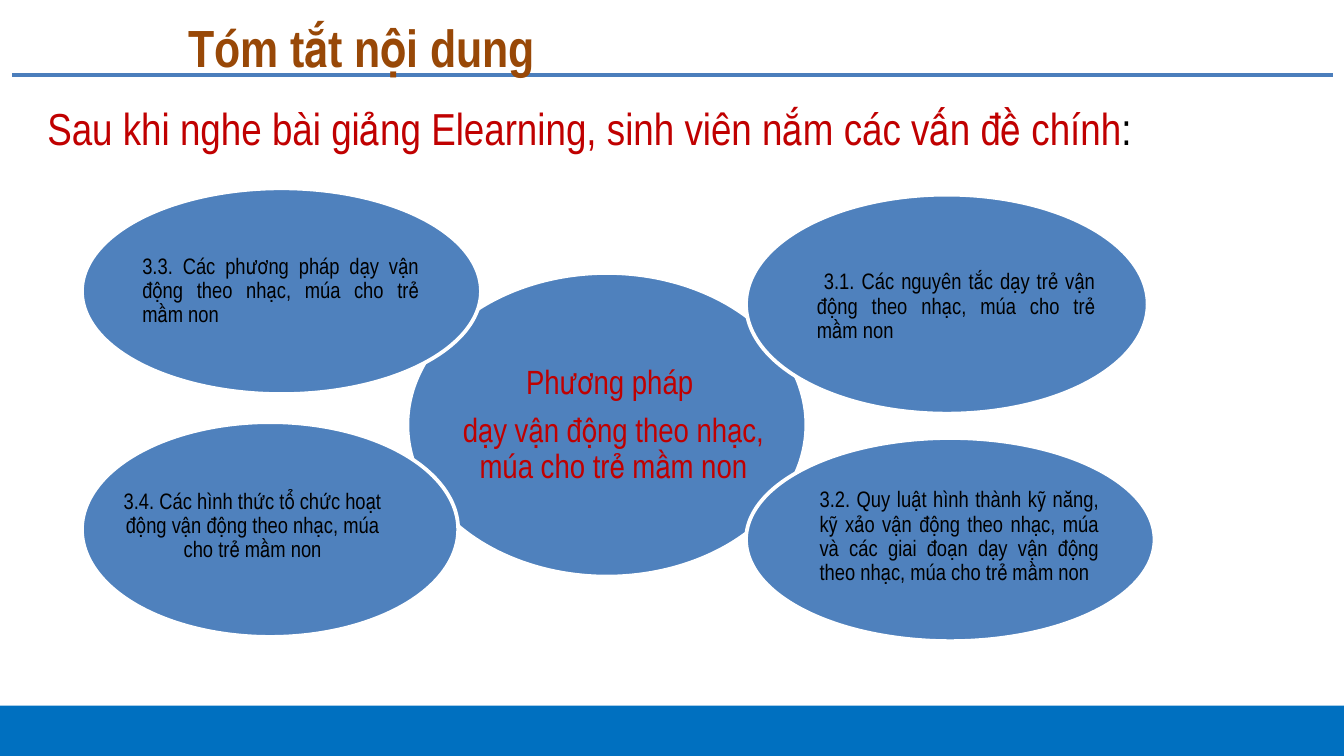
from lxml.etree import SubElement
from pptx import Presentation
from pptx.dml.color import RGBColor
from pptx.enum.shapes import MSO_CONNECTOR, MSO_SHAPE
from pptx.enum.text import MSO_ANCHOR, MSO_AUTO_SIZE, PP_ALIGN
from pptx.oxml.ns import qn
from pptx.util import Cm, Pt

BAR_BLUE = RGBColor(0x00, 0x70, 0xC0)
RULE_BLUE = RGBColor(0x4B, 0x7E, 0xBC)
OVAL_BLUE = RGBColor(0x4F, 0x81, 0xBD)
WHITE = RGBColor(0xFF, 0xFF, 0xFF)
BLACK = RGBColor(0x00, 0x00, 0x00)
RED = RGBColor(0xC0, 0x00, 0x00)
BROWN = RGBColor(0x98, 0x48, 0x07)
FONT = "Arial Narrow"

CENTRE_LINES = ["Phương pháp ", "dạy vận động theo nhạc, múa cho trẻ mầm non"]
TOPICS = [
    ((14.1, 3.68, 7.59, 4.14), (15.39, 4.34, 5.36, 2.92), PP_ALIGN.JUSTIFY,
     " 3.1. Các nguyên tắc dạy trẻ vận động theo nhạc, múa cho trẻ mầm non "),
    ((14.1, 8.28, 7.72, 3.84), (15.44, 8.46, 5.38, 3.38), PP_ALIGN.JUSTIFY,
     "3.2. Quy luật hình thành kỹ năng, kỹ xảo vận động theo nhạc, múa "
     "và các giai đoạn dạy vận động theo nhạc, múa cho trẻ mầm non"),
    ((1.55, 7.98, 7.11, 4.06), (2.26, 8.51, 5.03, 2.87), PP_ALIGN.CENTER,
     "3.4. Các hình thức tổ chức hoạt động vận động theo nhạc, múa cho trẻ mầm non"),
    ((1.55, 3.56, 7.54, 3.89), (2.64, 4.14, 5.33, 2.74), PP_ALIGN.JUSTIFY,
     "3.3. Các phương pháp dạy vận động theo nhạc, múa cho trẻ mầm non "),
]


def add_span(para, text, size, color, bold=False):
    span = para.add_run()
    span.text = text
    span.font.name = FONT
    span.font.size = Pt(size)
    span.font.bold = bold
    span.font.color.rgb = color


def place(shape, bounds):
    shape.left, shape.top, shape.width, shape.height = map(Cm, bounds)


def add_solid(page, kind, bounds, color):
    shape = page.shapes.add_shape(kind, *map(Cm, bounds))
    shape.shadow.inherit = False
    shape.fill.solid()
    shape.fill.fore_color.rgb = color
    shape.line.fill.background()
    return shape


def add_frame(page):
    bar = add_solid(page, MSO_SHAPE.RECTANGLE, (-0.1, 13.34, 25.6, 0.95), BAR_BLUE)
    rule = page.shapes.add_connector(
        MSO_CONNECTOR.STRAIGHT, Cm(0.23), Cm(1.42), Cm(25.2), Cm(1.42))
    rule.line.color.rgb = RULE_BLUE
    rule.line.width = Pt(2)
    SubElement(rule.element.spPr, qn("a:effectLst"))
    for shape in (bar, rule):
        page.shapes.title.element.addprevious(shape.element)


def fill_title(page):
    title = page.shapes.title
    place(title, (-11.3, 0.15, 36.27, 1.45))
    frame = title.text_frame
    frame.auto_size = MSO_AUTO_SIZE.NONE
    frame.vertical_anchor = MSO_ANCHOR.MIDDLE
    para = frame.paragraphs[0]
    para.alignment = PP_ALIGN.CENTER
    add_span(para, "Tóm tắt nội dung", 28, BROWN, True)


def fill_body(page):
    body = page.placeholders[1]
    place(body, (0.64, 1.68, 36.27, 12.62))
    frame = body.text_frame
    frame.auto_size = MSO_AUTO_SIZE.NONE
    para = frame.paragraphs[0]
    para.alignment = PP_ALIGN.JUSTIFY
    para.line_spacing = 1.1
    para.space_before = Pt(6)
    properties = para._p.get_or_add_pPr()
    properties.set("marL", "0")
    properties.set("indent", "0")
    SubElement(properties, qn("a:buNone"))
    add_span(para, "Sau khi nghe bài giảng Elearning, sinh viên nắm các vấn đề chính", 24, RED)
    add_span(para, ":", 24, BLACK)


def add_oval(page, oval_bounds, text_bounds, lines, size, color, align, inset):
    oval = add_solid(page, MSO_SHAPE.OVAL, oval_bounds, OVAL_BLUE)
    oval.line.color.rgb = WHITE
    oval.line.width = Pt(2)
    box = page.shapes.add_textbox(*map(Cm, text_bounds))
    frame = box.text_frame
    frame.word_wrap = True
    frame.vertical_anchor = MSO_ANCHOR.MIDDLE
    frame.margin_left = frame.margin_right = Cm(inset)
    frame.margin_top = frame.margin_bottom = Cm(inset)
    for index, line in enumerate(lines):
        para = frame.add_paragraph() if index else frame.paragraphs[0]
        para.alignment = align
        para.line_spacing = 0.9
        para.space_after = Pt(size * 0.35)
        add_span(para, line, size, color)


def main():
    deck = Presentation()
    deck.slide_width = Cm(25.4)
    deck.slide_height = Cm(14.29)
    page = deck.slides.add_slide(deck.slide_layouts[1])
    add_frame(page)
    fill_title(page)
    fill_body(page)
    add_oval(page, (7.7, 5.16, 7.54, 5.74), (8.38, 6.02, 6.43, 4.06),
             CENTRE_LINES, 18, RED, PP_ALIGN.CENTER, 0.08)
    for oval_bounds, text_bounds, align, text in TOPICS:
        add_oval(page, oval_bounds, text_bounds, [text], 12, BLACK, align, 0.05)
    deck.save("out.pptx")


if __name__ == "__main__":
    main()
